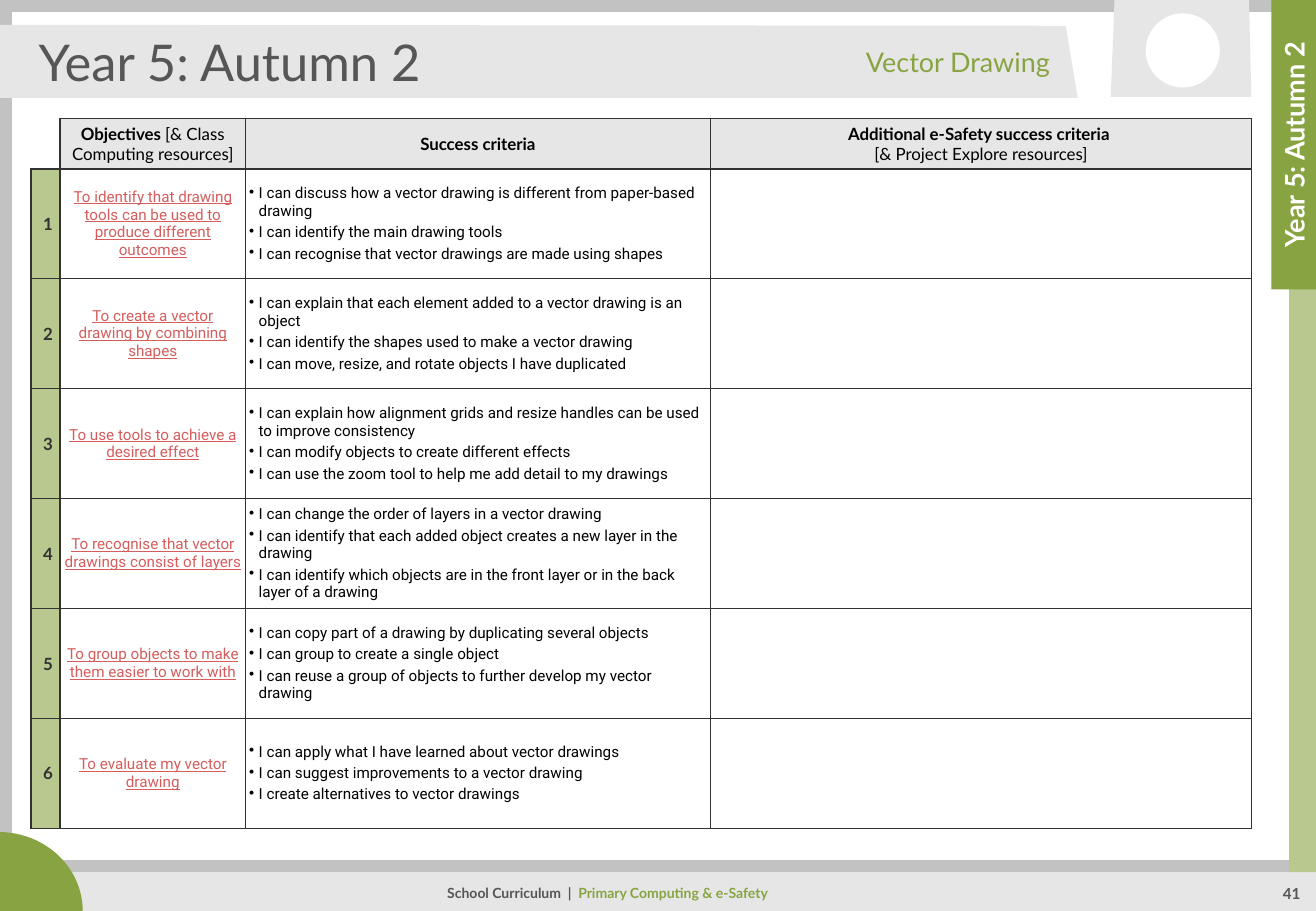
from lxml import etree
from pptx import Presentation
from pptx.dml.color import RGBColor
from pptx.enum.shapes import MSO_CONNECTOR, MSO_SHAPE
from pptx.enum.text import MSO_ANCHOR, PP_ALIGN
from pptx.oxml.ns import qn
from pptx.util import Cm, Pt

RECTANGLE, FRAME = MSO_SHAPE.RECTANGLE, MSO_SHAPE.FRAME
ARC, OVAL = MSO_SHAPE.ARC, MSO_SHAPE.OVAL
LEFT, CENTER, RIGHT = PP_ALIGN.LEFT, PP_ALIGN.CENTER, PP_ALIGN.RIGHT
MIDDLE = MSO_ANCHOR.MIDDLE
STRAIGHT = MSO_CONNECTOR.STRAIGHT

GREEN, PALE_GREEN, WHITE, BLACK = "88A442", "B8C88E", "FFFFFF", "000000"
LIGHT_GREY, MID_GREY, DARK_GREY = "E6E6E6", "C2C2C2", "565656"
INK, RED = "323232", "D55D5D"
TERM = "Year 5: Autumn 2"
CELL_MARGIN = 0.08

HEADERS = [
    ["Objectives ", "[& Class Computing resources]"],
    ["Success criteria"],
    ["Additional e-Safety success criteria ", "\n", "[& Project Explore resources]"],
]
LESSONS = [
    ("To identify that drawing tools can be used to produce different outcomes",
     ["I can discuss how a vector drawing is different from paper-based drawing",
      "I can identify the main drawing tools",
      "I can recognise that vector drawings are made using shapes"]),
    ("To create a vector drawing by combining shapes",
     ["I can explain that each element added to a vector drawing is an object",
      "I can identify the shapes used to make a vector drawing",
      "I can move, resize, and rotate objects I have duplicated"]),
    ("To use tools to achieve a desired effect",
     ["I can explain how alignment grids and resize handles can be used to improve consistency",
      "I can modify objects to create different effects",
      "I can use the zoom tool to help me add detail to my drawings"]),
    ("To recognise that vector drawings consist of layers",
     ["I can change the order of layers in a vector drawing",
      "I can identify that each added object creates a new layer in the drawing",
      "I can identify which objects are in the front layer or in the back layer of a drawing"]),
    ("To group objects to make them easier to work with",
     ["I can copy part of a drawing by duplicating several objects",
      "I can group to create a single object",
      "I can reuse a group of objects to further develop my vector drawing"]),
    ("To evaluate my vector drawing",
     ["I can apply what I have learned about vector drawings",
      "I can suggest improvements to a vector drawing",
      "I create alternatives to vector drawings"]),
]


def color(hex_string):
    return RGBColor.from_string(hex_string)


def style_font(font, size, hex_string, bold=False, name="Lato"):
    font.name, font.size, font.bold = name, Pt(size), bold
    font.color.rgb = color(hex_string)


def paint(shape, fill):
    shape.shadow.inherit = False
    shape.fill.solid()
    shape.fill.fore_color.rgb = color(fill)
    shape.line.fill.background()
    return shape


def add_block(slide, kind, box, fill):
    return paint(slide.shapes.add_shape(kind, *map(Cm, box)), fill)


def add_polygon(slide, points, fill):
    corners = [(Cm(x), Cm(y)) for x, y in points]
    builder = slide.shapes.build_freeform(*corners[0])
    builder.add_line_segments(corners[1:], close=True)
    return paint(builder.convert_to_shape(), fill)


def add_label(slide, box, text, size, hex_string, align=LEFT, bold=False):
    frame = slide.shapes.add_textbox(*map(Cm, box)).text_frame
    frame.word_wrap = True
    frame.vertical_anchor = MIDDLE
    frame.text = text
    paragraph = frame.paragraphs[0]
    paragraph.alignment = align
    style_font(paragraph.runs[0].font, size, hex_string, bold)
    return paragraph


def add_footer(slide, box):
    left, top, width, height = box
    add_block(slide, RECTANGLE, box, LIGHT_GREY)
    line_y = Cm(top - 0.13)
    rule = slide.shapes.add_connector(STRAIGHT, Cm(left + 0.13), line_y, Cm(left + width), line_y)
    rule.line.color.rgb = color(MID_GREY)
    rule.line.width = Pt(7)
    etree.SubElement(rule._element.spPr, qn("a:effectLst"))
    add_block(slide, ARC, (left - 1.78, top - 0.84, 3.51, 3.3), GREEN)
    credit = add_label(slide, (left + 5.2, top + 0.05, 15, 0.76),
                       "School Curriculum  |  ", 8.3, DARK_GREY, CENTER, True)
    subject = credit.add_run()
    subject.text = "Primary Computing & e-Safety"
    style_font(subject.font, 8.3, GREEN, True)
    add_label(slide, (left + 26.5, top + 0.07, 1, 0.76), "41", 9, DARK_GREY, CENTER, True)


def add_title_banner(slide, box):
    left, top, width, height = box
    right, bottom = left + width, top + height
    add_polygon(slide, [(left, top), (right - 0.25, top + 0.02), (right, bottom), (left, bottom)],
                LIGHT_GREY)
    add_label(slide, (left + 0.56, top + 0.13, 12, 1.27), TERM, 30, DARK_GREY)
    add_label(slide, (right - 8.33, top + 0.13, 8, 1.27), "Vector Drawing", 16, GREEN, RIGHT)


def add_badge(slide, box):
    left, top, width, height = box
    right, bottom = left + width, top + height
    add_polygon(slide, [(left + 0.08, top), (right - 0.05, top), (right, bottom), (left, bottom)],
                LIGHT_GREY)
    add_block(slide, OVAL, (left + 0.73, top + 0.28, 1.55, 1.55), WHITE)


def add_side_tab(slide, box):
    left, top, width, height = box
    add_block(slide, RECTANGLE, (left + 0.37, top, width - 0.37, height), PALE_GREEN)
    length = 6.05
    tab = add_block(slide, RECTANGLE,
                    (left + (width - length) / 2, top + (length - width) / 2, length, width), GREEN)
    tab.rotation = 270
    frame = tab.text_frame
    frame.text = TERM
    frame.vertical_anchor = MIDDLE
    frame.paragraphs[0].alignment = CENTER
    style_font(frame.paragraphs[0].runs[0].font, 16, WHITE, True)


def set_cell(cell, fill, sides="LRTB", margin=None):
    properties = cell._tc.get_or_add_tcPr()
    for side in "LRTB":
        line = etree.SubElement(properties, qn(f"a:ln{side}"), w=str(Pt(1)))
        if side in sides:
            solid = etree.SubElement(line, qn("a:solidFill"))
            etree.SubElement(solid, qn("a:srgbClr"), val=INK)
        else:
            etree.SubElement(line, qn("a:noFill"))
    cell.vertical_anchor = MIDDLE
    if margin:
        cell.margin_left = cell.margin_right = cell.margin_top = cell.margin_bottom = Cm(margin)
    if fill:
        cell.fill.solid()
        cell.fill.fore_color.rgb = color(fill)
    else:
        cell.fill.background()


def write_header(cell, pieces):
    set_cell(cell, LIGHT_GREY, margin=CELL_MARGIN)
    paragraph = cell.text_frame.paragraphs[0]
    paragraph.alignment = CENTER
    for piece in pieces:
        if piece == "\n":
            paragraph.add_line_break()
            continue
        run = paragraph.add_run()
        run.text = piece
        style_font(run.font, 10, BLACK, not piece.startswith("["))


def write_criteria(cell, criteria):
    cell.text_frame.text = "\n".join(criteria)
    for paragraph in cell.text_frame.paragraphs:
        properties = paragraph._p.get_or_add_pPr()
        properties.set("marL", str(Cm(0.2)))
        properties.set("indent", str(Cm(-0.2)))
        etree.SubElement(properties, qn("a:buChar"), char="•")
        paragraph.space_after = Pt(2)
        style_font(paragraph.runs[0].font, 9, BLACK, name="Roboto")


def add_lesson_table(slide, box):
    table = slide.shapes.add_table(len(LESSONS) + 1, 4, *map(Cm, box)).table
    table.first_row = table.horz_banding = False
    header_height = 1.05
    for column, width in zip(table.columns, (0.6, 3.87, 9.72, box[2] - 14.19)):
        column.width = Cm(width)
    for index, row in enumerate(table.rows):
        row.height = Cm((box[3] - header_height) / len(LESSONS) if index else header_height)
    set_cell(table.cell(0, 0), None, "RB")
    for column, pieces in enumerate(HEADERS, 1):
        write_header(table.cell(0, column), pieces)
    for number, (objective, criteria) in enumerate(LESSONS, 1):
        number_cell, objective_cell, criteria_cell, safety_cell = table.rows[number].cells
        set_cell(number_cell, PALE_GREEN)
        for cell in (objective_cell, criteria_cell, safety_cell):
            set_cell(cell, WHITE, margin=CELL_MARGIN)
        number_cell.text_frame.text = str(number)
        objective_cell.text_frame.text = objective
        for cell in (number_cell, objective_cell):
            cell.text_frame.paragraphs[0].alignment = CENTER
        style_font(number_cell.text_frame.paragraphs[0].runs[0].font, 10, INK, True)
        paragraph = objective_cell.text_frame.paragraphs[0]
        paragraph.space_after = Pt(2)
        style_font(paragraph.runs[0].font, 9, RED, name="Roboto")
        paragraph.runs[0].font.underline = True
        write_criteria(criteria_cell, criteria)


def main():
    presentation = Presentation()
    presentation.slide_width, presentation.slide_height = Cm(27.51), Cm(19.05)
    slide = presentation.slides.add_slide(presentation.slide_layouts[6])
    border = add_block(slide, FRAME, (0, 0, 27.51, 19.05), MID_GREY)
    border.adjustments[0] = 0.25 / 19.05
    add_footer(slide, (0, 18.24, 27.51, 0.81))
    add_title_banner(slide, (0, 0.52, 22.53, 1.53))
    add_side_tab(slide, (26.58, 0, 0.93, 18.24))
    add_badge(slide, (23.22, 0, 2.94, 2.03))
    add_lesson_table(slide, (0.65, 2.48, 25.5, 14.85))
    presentation.save("out.pptx")


if __name__ == "__main__":
    main()
